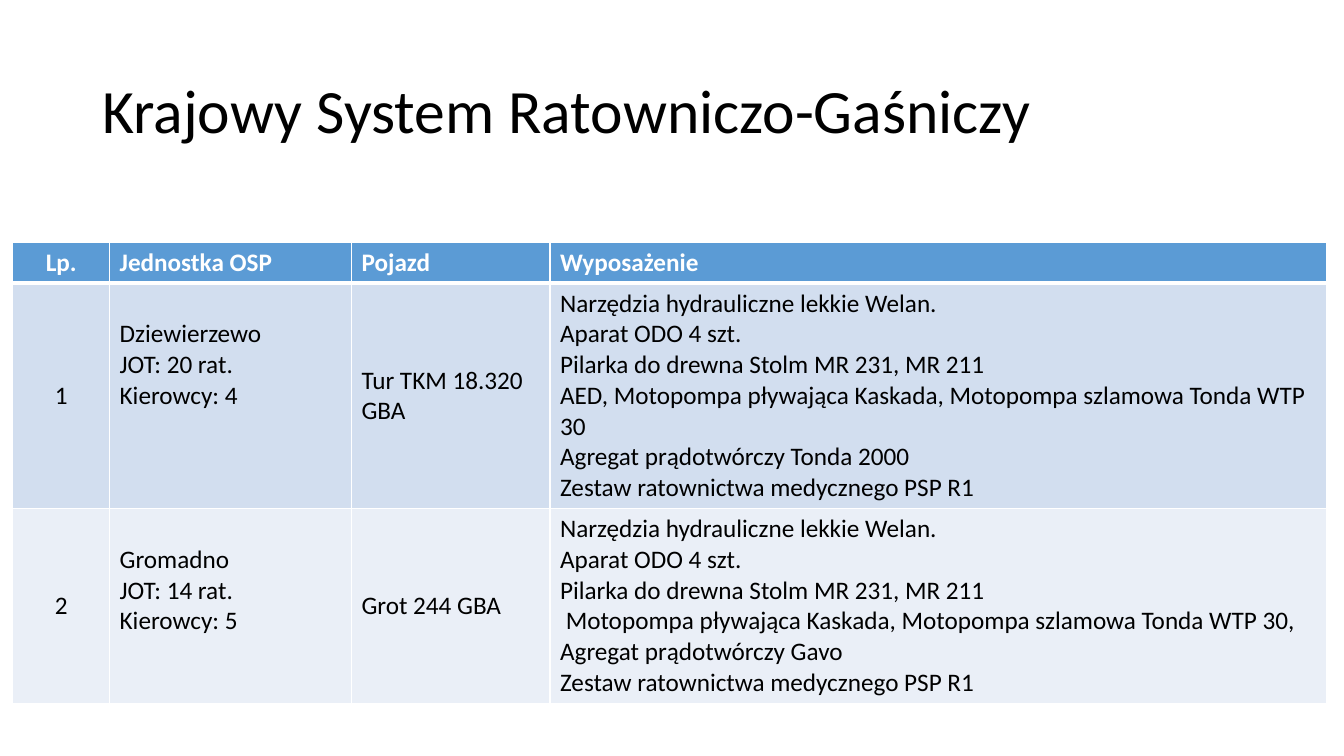
from dataclasses import dataclass

from pptx import Presentation
from pptx.dml.color import RGBColor as Color
from pptx.enum.text import MSO_ANCHOR as Anchor, PP_ALIGN as Align
from pptx.oxml import parse_xml
from pptx.oxml.ns import nsdecls
from pptx.util import Pt


@dataclass(frozen=True)
class Theme:
    font: str = "Calibri"
    title_size: int = 44
    table_size: int = 18
    line_height: int = 22
    dark: str = "000000"
    light: str = "FFFFFF"
    header: str = "5B9BD5"
    bands: tuple = ("D2DEEF", "EAEFF7")
    thin: int = 1
    thick: int = 3


class SlideBuilder:
    def __init__(self, page, theme):
        self.page = page
        self.theme = theme

    def format_para(self, para, size, color, bold=False, align=Align.LEFT):
        para.alignment = align
        for span in para.runs:
            span.font.name = self.theme.font
            span.font.size = Pt(size)
            span.font.bold = bold
            span.font.color.rgb = Color.from_string(color)

    def title(self, text, left, top, width, height):
        box = self.page.shapes.title
        box.left, box.top, box.width, box.height = map(Pt, (left, top, width, height))
        frame = box.text_frame
        frame.text = text
        frame.word_wrap = True
        frame.vertical_anchor = Anchor.MIDDLE
        frame.paragraphs[0].line_spacing = 0.9
        self.format_para(frame.paragraphs[0], self.theme.title_size, self.theme.dark)

    def borders(self, cell, top, bottom):
        properties = cell._tc.get_or_add_tcPr()
        thin = self.theme.thin
        for side, width in zip("LRTB", (thin, thin, top, bottom)):
            properties.append(parse_xml(
                f'<a:ln{side} {nsdecls("a")} w="{Pt(width)}"><a:solidFill>'
                f'<a:srgbClr val="{self.theme.light}"/></a:solidFill></a:ln{side}>'))

    def cell(self, cell, text, fill, color, bold, align, anchor):
        cell.fill.solid()
        cell.fill.fore_color.rgb = Color.from_string(fill)
        cell.vertical_anchor = anchor
        cell.text_frame.text = text
        for para in cell.text_frame.paragraphs:
            self.format_para(para, self.theme.table_size, color, bold, align)

    def table(self, rows, left, top, widths, heights):
        theme = self.theme
        frame = self.page.shapes.add_table(
            len(rows), len(widths), Pt(left), Pt(top), Pt(sum(widths)), Pt(sum(heights)))
        table = frame.table
        for column, width in zip(table.columns, widths):
            column.width = Pt(width)
        for row, height in zip(table.rows, heights):
            row.height = Pt(height)

        for row_index, texts in enumerate(rows):
            is_header = row_index == 0
            fill = theme.header if is_header else theme.bands[(row_index - 1) % 2]
            for column_index, text in enumerate(texts):
                cell = table.cell(row_index, column_index)
                self.borders(cell,
                             theme.thick if row_index == 1 else theme.thin,
                             theme.thick if is_header else theme.thin)
                self.cell(cell, text, fill,
                          theme.light if is_header else theme.dark, is_header,
                          Align.CENTER if column_index == 0 else Align.LEFT,
                          Anchor.TOP if column_index == len(widths) - 1 else Anchor.MIDDLE)
        return table

    def raise_text(self, cell, lines):
        cell.margin_bottom = Pt(3.6 + lines * self.theme.line_height)


# Table content
COMMON_GEAR = ("Narzędzia hydrauliczne lekkie Welan.\nAparat ODO 4 szt.\n"
               "Pilarka do drewna Stolm MR 231, MR 211\n")
MEDICAL_KIT = "\nZestaw ratownictwa medycznego PSP R1"
ROWS = [
    ("Lp.", "Jednostka OSP", "Pojazd", "Wyposażenie"),
    ("1", "Dziewierzewo\nJOT: 20 rat.\nKierowcy: 4", "Tur TKM 18.320 GBA",
     COMMON_GEAR
     + "AED, Motopompa pływająca Kaskada, Motopompa szlamowa Tonda WTP 30\n"
       "Agregat prądotwórczy Tonda 2000"
     + MEDICAL_KIT),
    ("2", "Gromadno\nJOT: 14 rat.\nKierowcy: 5", "Grot 244 GBA",
     COMMON_GEAR
     + " Motopompa pływająca Kaskada, Motopompa szlamowa Tonda WTP 30, "
       "Agregat prądotwórczy Gavo"
     + MEDICAL_KIT),
]


def main():
    deck = Presentation()
    deck.slide_width, deck.slide_height = Pt(960), Pt(540)
    page = deck.slides.add_slide(deck.slide_layouts[5])
    builder = SlideBuilder(page, Theme())

    # Heading
    builder.title("Krajowy System Ratowniczo-Gaśniczy", 66, 28.8, 828, 104.4)

    # Units and their equipment
    table = builder.table(ROWS, 9.2, 173, (69.1, 172.8, 141.8, 554.4), (28, 161, 139))

    # Unit names sit above the middle of their rows
    for row_index, lines in ((1, 2), (2, 1)):
        builder.raise_text(table.cell(row_index, 1), lines)

    deck.save("out.pptx")


if __name__ == "__main__":
    main()
